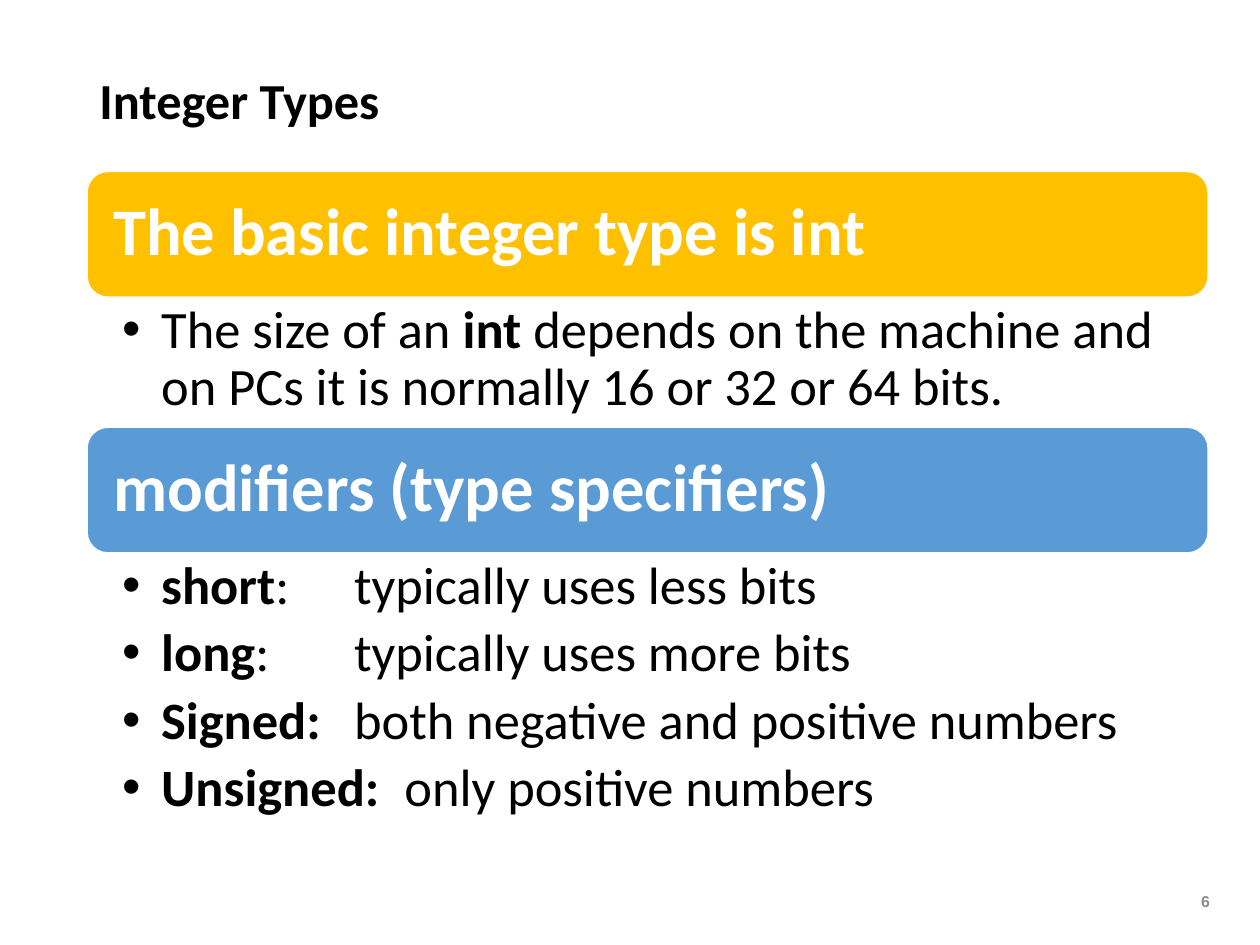
from dataclasses import dataclass

from lxml.etree import SubElement
from pptx import Presentation
from pptx.dml.color import RGBColor
from pptx.enum.shapes import MSO_SHAPE as SHAPE
from pptx.enum.text import MSO_ANCHOR as ANCHOR, PP_ALIGN as ALIGN
from pptx.oxml.ns import qn
from pptx.util import Inches, Pt


@dataclass(frozen=True)
class Theme:
    black: str = "000000"
    white: str = "FFFFFF"
    gray: str = "8C8C8C"
    gold: str = "FFC000"
    blue: str = "5B9BD5"
    title: float = 28.8
    banner: float = 38
    body: float = 30
    number: float = 9


T = Theme()
LEFT, WIDTH, BANNER_H = 0.69, 8.9, 1.0


def add_run(p, text, size, color, bold=True, font="Calibri"):
    r = p.add_run()
    r.text = text
    r.font.name, r.font.size, r.font.bold = font, Pt(size), bold
    r.font.color.rgb = RGBColor.from_string(color)


def add_text_box(left, top, width, height, anchor):
    tf = s.shapes.add_textbox(*map(Inches, (left, top, width, height))).text_frame
    tf.word_wrap = True
    tf.vertical_anchor = anchor
    return tf


prs = Presentation()
prs.slide_width, prs.slide_height = Inches(10), Inches(7.5)
s = prs.slides.add_slide(prs.slide_layouts[6])

# Title and slide number
p = add_text_box(LEFT, 0.5, 4.31, 0.58, ANCHOR.BOTTOM).paragraphs[0]
p.line_spacing = 0.9
add_run(p, "Integer Types", T.title, T.black)

p = add_text_box(9.31, 6.95, 0.39, 0.4, ANCHOR.MIDDLE).paragraphs[0]
p.alignment = ALIGN.RIGHT
add_run(p, "6", T.number, T.gray, font="Arial")

# Sections: banner, colour, top, list height, bullets as (text, bold) runs
sections = [
    ("The basic integer type is int", T.gold, 1.36, 1.03, [
        [("The size of an ", False), ("int", True),
         (" depends on the machine and on PCs it is normally 16 or 32 or 64 bits.", False)],
    ]),
    ("modifiers (type specifiers)", T.blue, 3.39, 2.28, [
        [("short", True), (":\ttypically uses less bits", False)],
        [("long", True), (":\ttypically uses more bits", False)],
        [("Signed:", True), ("\tboth negative and positive numbers", False)],
        [("Unsigned:", True), ("\tonly positive numbers", False)],
    ]),
]
TAB_STOPS = (1.84, 2.24)

for heading, color, top, list_h, bullets in sections:
    sp = s.shapes.add_shape(SHAPE.ROUNDED_RECTANGLE, Inches(LEFT), Inches(top),
                            Inches(WIDTH), Inches(BANNER_H))
    sp.shadow.inherit = False
    sp.fill.solid()
    sp.fill.fore_color.rgb = RGBColor.from_string(color)
    sp.line.color.rgb = RGBColor.from_string(T.white)
    sp.line.width = Pt(1)
    tf = sp.text_frame
    tf.word_wrap = True
    tf.vertical_anchor = ANCHOR.MIDDLE
    tf.margin_left = tf.margin_right = Inches(0.16)
    p = tf.paragraphs[0]
    p.alignment, p.line_spacing = ALIGN.LEFT, 0.9
    add_run(p, heading, T.banner, T.white)

    tf = add_text_box(LEFT, top + BANNER_H, WIDTH, list_h, ANCHOR.TOP)
    tf.margin_left, tf.margin_right = Inches(0.28), Inches(0.3)
    for i, runs in enumerate(bullets):
        p = tf.add_paragraph() if i else tf.paragraphs[0]
        p.level, p.line_spacing, p.space_after = 1, 0.9, Pt(6)
        pPr = p._p.get_or_add_pPr()
        pPr.set("marL", str(Inches(0.31)))
        pPr.set("indent", str(-Inches(0.31)))
        SubElement(pPr, qn("a:buFont"), typeface="Arial")
        SubElement(pPr, qn("a:buChar"), char="•")
        if len(bullets) > 1:
            tabs = SubElement(pPr, qn("a:tabLst"))
            for pos in TAB_STOPS:
                SubElement(tabs, qn("a:tab"), pos=str(Inches(pos)), algn="l")
        for text, bold in runs:
            add_run(p, text, T.body, T.black, bold)

prs.save("out.pptx")
